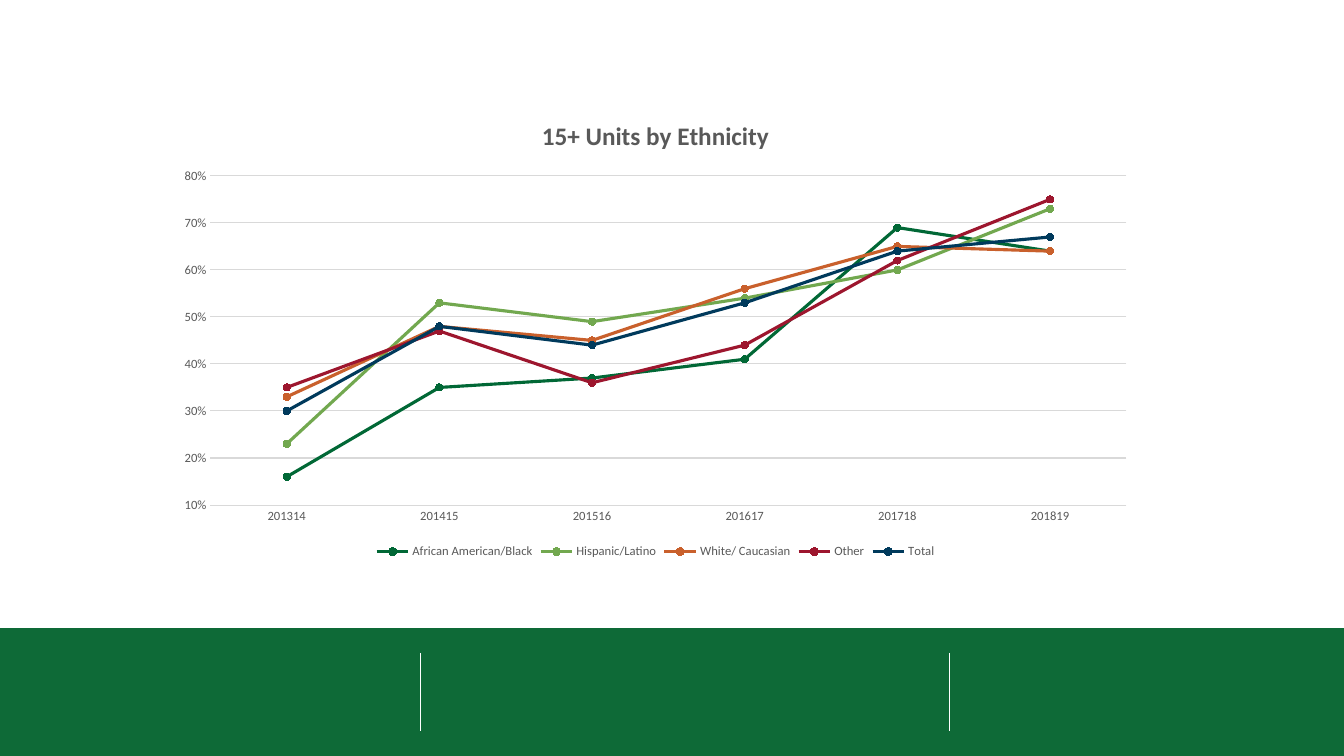
from pptx import Presentation
from pptx.chart.data import CategoryChartData
from pptx.dml.color import RGBColor
from pptx.enum.chart import XL_CHART_TYPE, XL_LEGEND_POSITION, XL_MARKER_STYLE, XL_TICK_MARK
from pptx.enum.shapes import MSO_CONNECTOR, MSO_SHAPE
from pptx.oxml.ns import qn
from pptx.util import Pt
from lxml import etree

LINES = XL_CHART_TYPE.LINE_MARKERS
BOTTOM = XL_LEGEND_POSITION.BOTTOM
CIRCLE = XL_MARKER_STYLE.CIRCLE
NO_TICK = XL_TICK_MARK.NONE
STRAIGHT = MSO_CONNECTOR.STRAIGHT
RECT = MSO_SHAPE.RECTANGLE

FONT = "Calibri"
SCALE = 914400 / 100.8
HEX = {"white": "FFFFFF", "band": "0E6A37", "text": "595959", "grid": "D9D9D9"}
YEARS = ["201314", "201415", "201516", "201617", "201718", "201819"]
GROUPS = [
    ("African American/Black", "016836", (0.16, 0.35, 0.37, 0.41, 0.69, 0.64)),
    ("Hispanic/Latino", "72A84F", (0.23, 0.53, 0.49, 0.54, 0.60, 0.73)),
    ("White/ Caucasian", "C9602C", (0.33, 0.48, 0.45, 0.56, 0.65, 0.64)),
    ("Other", "9D162E", (0.35, 0.47, 0.36, 0.44, 0.62, 0.75)),
    ("Total", "003A5C", (0.30, 0.48, 0.44, 0.53, 0.64, 0.67)),
]


def px(*nums):
    return [round(n * SCALE) for n in nums]


def style(font, size, bold=False):
    font.name, font.size, font.bold = FONT, Pt(size), bold
    font.color.rgb = RGBColor.from_string(HEX["text"])


deck = Presentation()
deck.slide_width, deck.slide_height = px(1344, 756)
slide = deck.slides.add_slide(deck.slide_layouts[6])
shapes = slide.shapes

# Footer band with two dividers
band = shapes.add_shape(RECT, *px(0, 628, 1344, 128))
band.shadow.inherit = False
band.fill.solid()
band.fill.fore_color.rgb = RGBColor.from_string(HEX["band"])
band.line.fill.background()
for x in (421, 950):
    rule = shapes.add_connector(STRAIGHT, *px(x, 653, x, 731))
    rule.line.color.rgb = RGBColor.from_string(HEX["white"])
    rule.line.width = Pt(0.75)
    etree.SubElement(rule._element.spPr, qn("a:effectLst"))

# Line chart
data = CategoryChartData(number_format="0%")
data.categories = YEARS
for name, tint, vals in GROUPS:
    data.add_series(name, vals)
chart = shapes.add_chart(LINES, *px(165, 99, 981, 464), data).chart
style(chart.font, 10)

# Title and legend
chart.has_title = True
chart.chart_title.include_in_layout = False
run = chart.chart_title.text_frame.paragraphs[0].add_run()
run.text = "15+ Units by Ethnicity"
style(run.font, 18, True)
chart.has_legend = True
chart.legend.position = BOTTOM
chart.legend.include_in_layout = False
style(chart.legend.font, 9)

# Axes and grid
years, share = chart.category_axis, chart.value_axis
for axis in (years, share):
    axis.major_tick_mark = axis.minor_tick_mark = NO_TICK
    style(axis.tick_labels.font, 9)
share.minimum_scale, share.maximum_scale, share.major_unit = 0.1, 0.8, 0.1
share.tick_labels.number_format = "0%"
share.tick_labels.number_format_is_linked = False
share.format.line.fill.background()
share.has_major_gridlines = True
for line in (years.format.line, share.major_gridlines.format.line):
    line.color.rgb = RGBColor.from_string(HEX["grid"])
    line.width = Pt(0.75)

# Series lines and markers
plot = chart.plots[0]
plot.vary_by_categories = False
for series, (name, tint, vals) in zip(plot.series, GROUPS):
    color = RGBColor.from_string(tint)
    series.smooth = False
    series.format.line.color.rgb = color
    series.format.line.width = Pt(2.25)
    mark = series.marker
    mark.style, mark.size = CIRCLE, 5
    mark.format.fill.solid()
    mark.format.fill.fore_color.rgb = color
    mark.format.line.color.rgb = color

deck.save("out.pptx")
